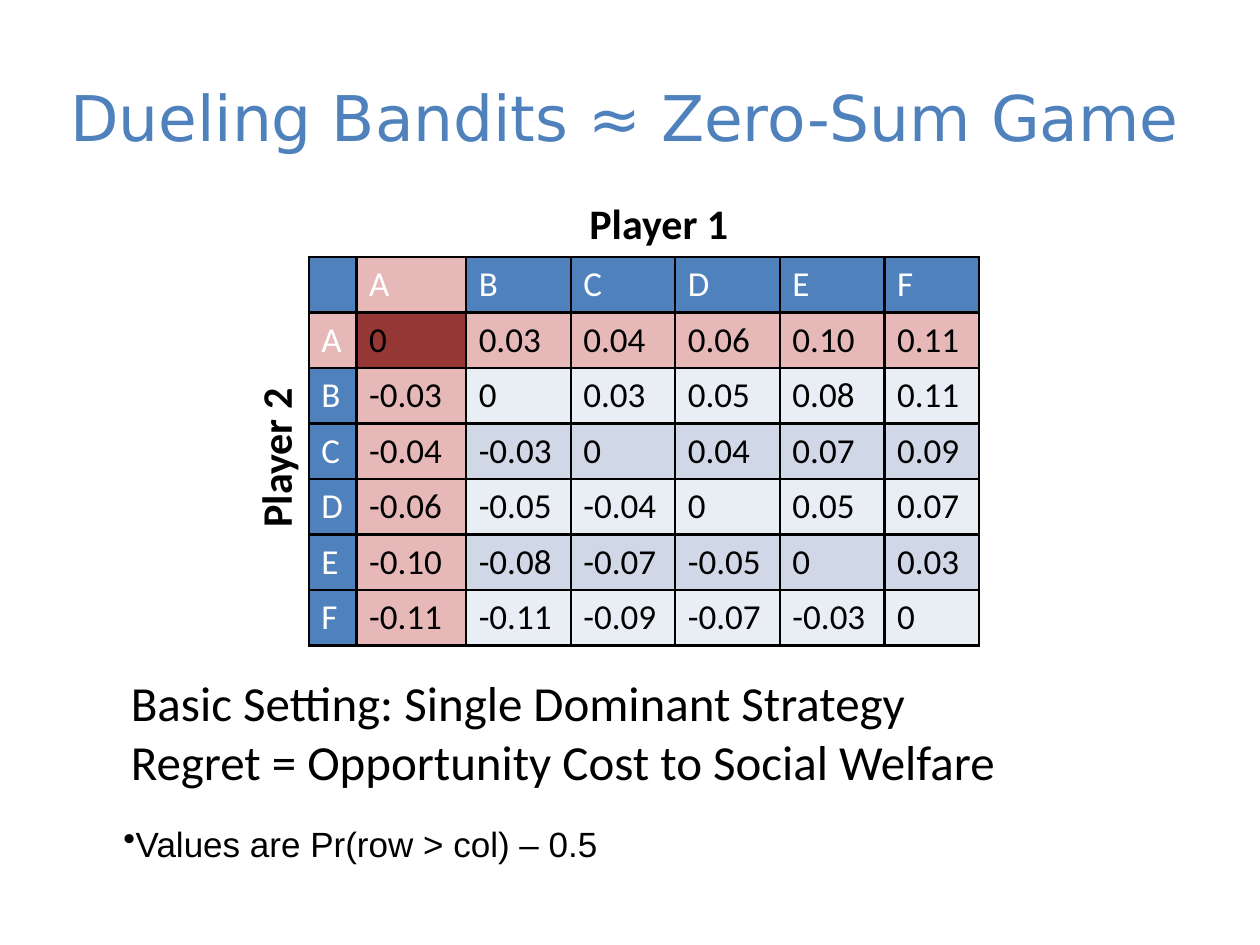
from dataclasses import dataclass, field

from lxml.etree import SubElement
from pptx import Presentation
from pptx.dml.color import RGBColor
from pptx.enum.text import MSO_ANCHOR, MSO_AUTO_SIZE, PP_ALIGN
from pptx.oxml.ns import qn
from pptx.slide import Slide
from pptx.table import _Cell
from pptx.util import Inches, Pt

BLUE = RGBColor(0x4F, 0x81, 0xBD)
PINK = RGBColor(0xE6, 0xB9, 0xB8)
DARK_RED = RGBColor(0x95, 0x37, 0x35)
LIGHT_BAND = RGBColor(0xE9, 0xED, 0xF4)
DARK_BAND = RGBColor(0xD0, 0xD8, 0xE8)
BLACK = RGBColor(0, 0, 0)
WHITE = RGBColor(0xFF, 0xFF, 0xFF)

STRATEGIES = "ABCDEF"
# Payoffs above the diagonal; those below are their negatives.
PAYOFFS = [
    ["0.03", "0.04", "0.06", "0.10", "0.11"],
    ["0.03", "0.05", "0.08", "0.11"],
    ["0.04", "0.07", "0.09"],
    ["0.05", "0.07"],
    ["0.03"],
]
COLUMN_WIDTHS = [0.38, 0.87, 0.83, 0.83, 0.83, 0.83, 0.75]
ROW_HEIGHT = 0.43


@dataclass
class Label:
    lines: list[str]
    left: float
    top: float
    width: float
    height: float
    size: int
    font: str = "Calibri"
    color: RGBColor = BLACK
    bold: bool = False
    rotation: int = 0
    bullet: str = ""
    align: PP_ALIGN = PP_ALIGN.LEFT
    frame_format: dict = field(default_factory=lambda: {
        "word_wrap": False, "auto_size": MSO_AUTO_SIZE.SHAPE_TO_FIT_TEXT})


LABELS = [
    Label(["Dueling Bandits ≈ Zero-Sum Game"], 0.41, 0.3, 9.1, 1.25, 36,
          font="DejaVu Sans", color=BLUE, align=PP_ALIGN.CENTER,
          frame_format={"word_wrap": True,
                        "vertical_anchor": MSO_ANCHOR.MIDDLE}),
    Label(["Values are Pr(row > col) – 0.5"], 0.88, 6.48, 3.99, 0.44, 20,
          font="Arial", bullet="•"),
    Label(["Basic Setting: Single Dominant Strategy",
           "Regret = Opportunity Cost to Social Welfare"],
          0.94, 5.29, 7.18, 1.04, 28),
    Label(["Player 1"], 4.58, 1.52, 1.33, 0.5, 24, bold=True),
    Label(["Player 2"], 1.52, 3.37, 1.33, 0.5, 24, bold=True, rotation=270),
]


def set_font(font, size: int, name: str, color: RGBColor, bold: bool = False) -> None:
    for attribute, value in {"size": Pt(size), "name": name, "bold": bold}.items():
        setattr(font, attribute, value)
    font.color.rgb = color


def add_label(slide: Slide, label: Label) -> None:
    shape = slide.shapes.add_textbox(
        Inches(label.left), Inches(label.top), Inches(label.width), Inches(label.height))
    shape.rotation = label.rotation
    frame = shape.text_frame
    frame.text = "\n".join(label.lines)
    for attribute, value in label.frame_format.items():
        setattr(frame, attribute, value)
    for paragraph in frame.paragraphs:
        paragraph.alignment = label.align
        if label.bullet:
            properties = paragraph._p.get_or_add_pPr()
            SubElement(properties, qn("a:buChar"), char=label.bullet)
        set_font(paragraph.font, label.size, label.font, label.color, label.bold)


def payoff(row: int, column: int) -> str:
    if row == column:
        return "0"
    if row < column:
        return PAYOFFS[row][column - row - 1]
    return "-" + payoff(column, row)


def cell_text(row: int, column: int) -> str:
    if row and column:
        return payoff(row - 1, column - 1)
    return STRATEGIES[row + column - 1] if row + column else ""


def cell_fill(row: int, column: int) -> RGBColor:
    """Mark the dominant strategy's row and column, and band the rest."""
    if row == column == 1:
        return DARK_RED
    if row == 1 or column == 1:
        return PINK
    if row == 0 or column == 0:
        return BLUE
    return DARK_BAND if row % 2 else LIGHT_BAND


def add_borders(cell: _Cell) -> None:
    properties = cell._tc.get_or_add_tcPr()
    for side in ("lnL", "lnR", "lnT", "lnB"):
        line = SubElement(properties, qn(f"a:{side}"), w=str(Pt(1.5)))
        fill = SubElement(line, qn("a:solidFill"))
        SubElement(fill, qn("a:srgbClr"), val=str(BLACK))


def add_payoff_table(slide: Slide) -> None:
    count = len(STRATEGIES) + 1
    table = slide.shapes.add_table(
        count, count, Inches(2.45), Inches(2.04),
        Inches(sum(COLUMN_WIDTHS)), Inches(ROW_HEIGHT * count)).table
    for column, width in zip(table.columns, COLUMN_WIDTHS):
        column.width = Inches(width)
    for row_index, row in enumerate(table.rows):
        row.height = Inches(ROW_HEIGHT)
        for column_index, cell in enumerate(row.cells):
            add_borders(cell)
            cell.fill.solid()
            cell.fill.fore_color.rgb = cell_fill(row_index, column_index)
            cell.text = cell_text(row_index, column_index)
            color = BLACK if row_index and column_index else WHITE
            set_font(cell.text_frame.paragraphs[0].font, 20, "Calibri", color)


def main() -> None:
    presentation = Presentation()
    presentation.slide_width = Inches(10)
    presentation.slide_height = Inches(7.5)
    slide = presentation.slides.add_slide(presentation.slide_layouts[6])
    add_payoff_table(slide)
    for label in LABELS:
        add_label(slide, label)
    presentation.save("out.pptx")


if __name__ == "__main__":
    main()
